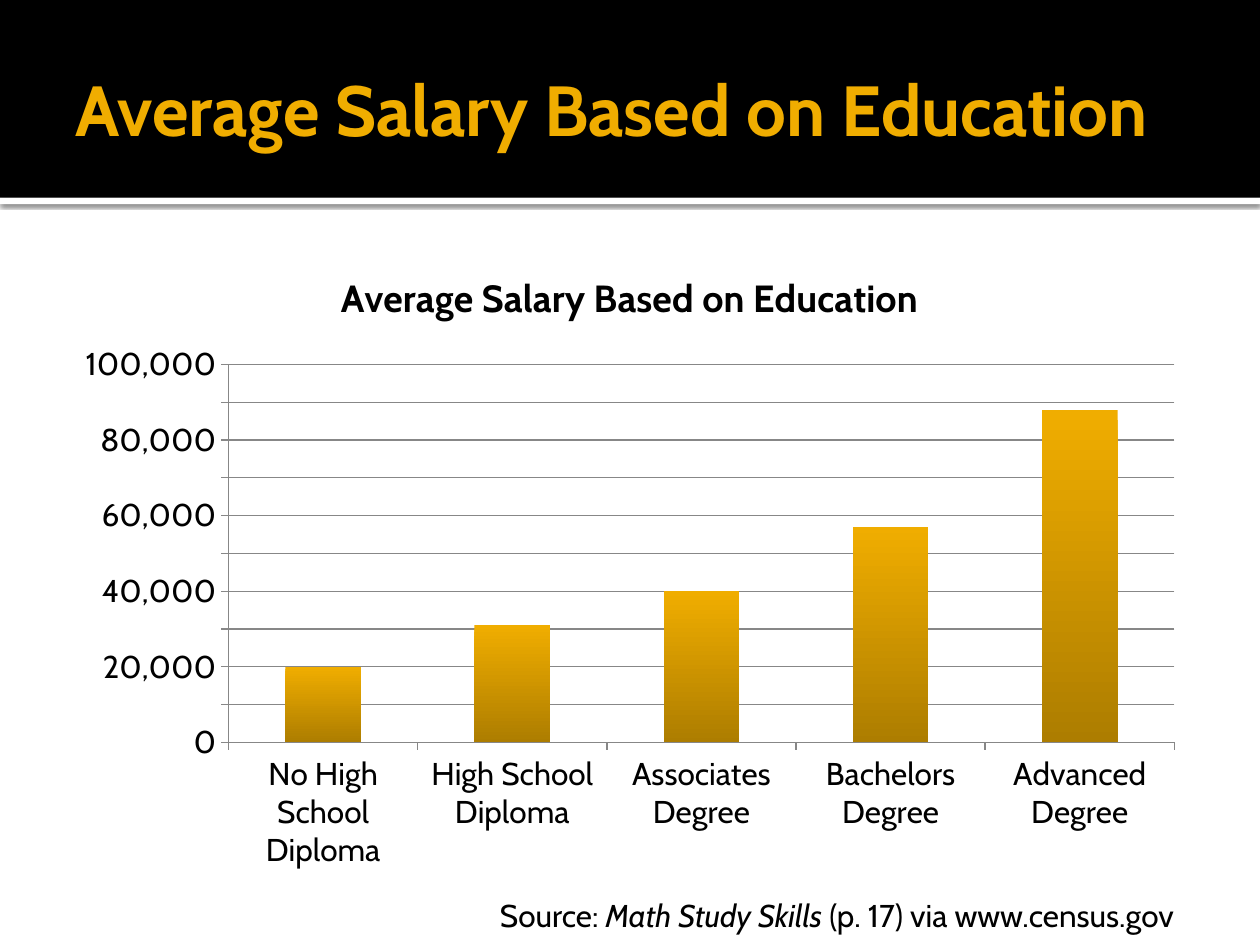
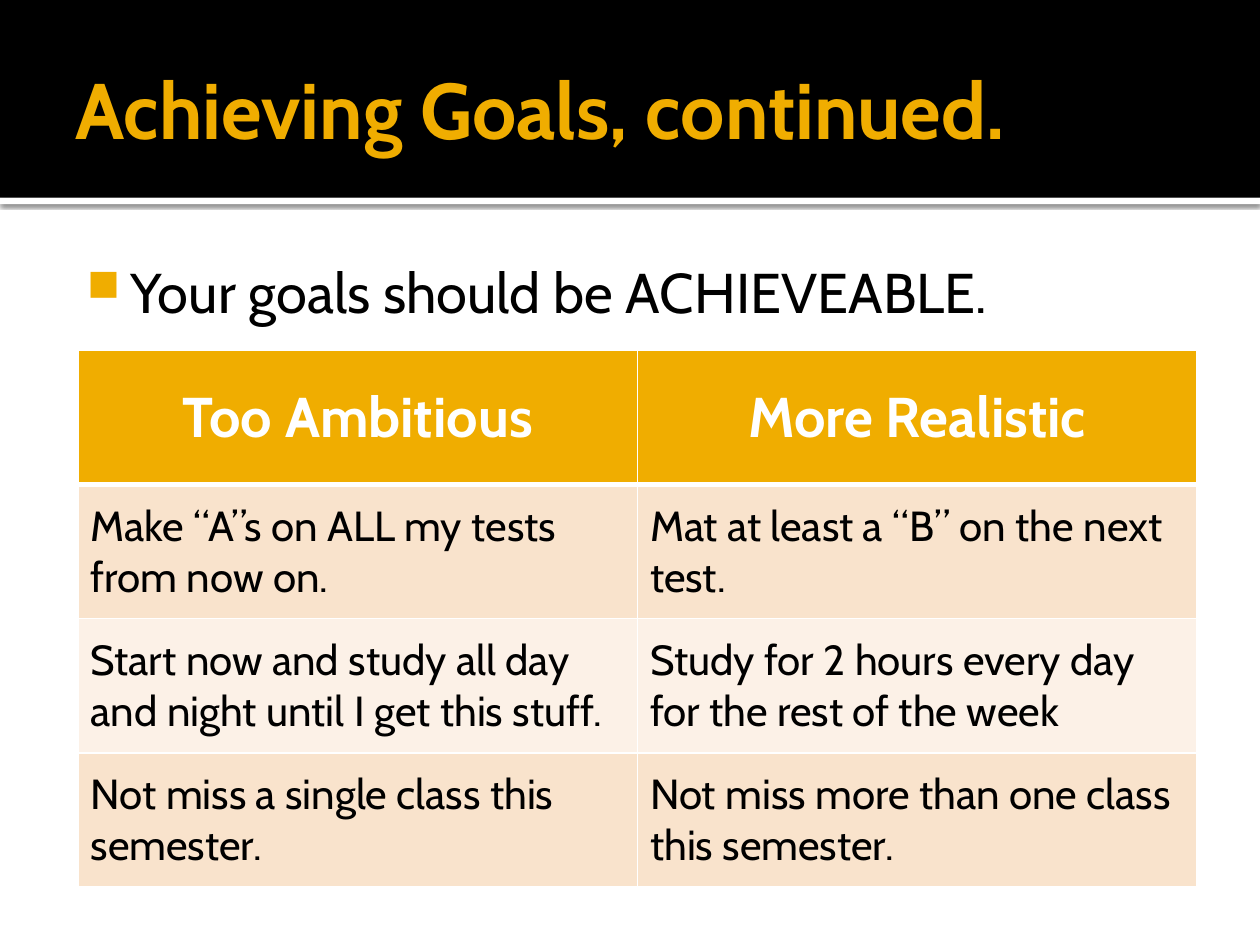
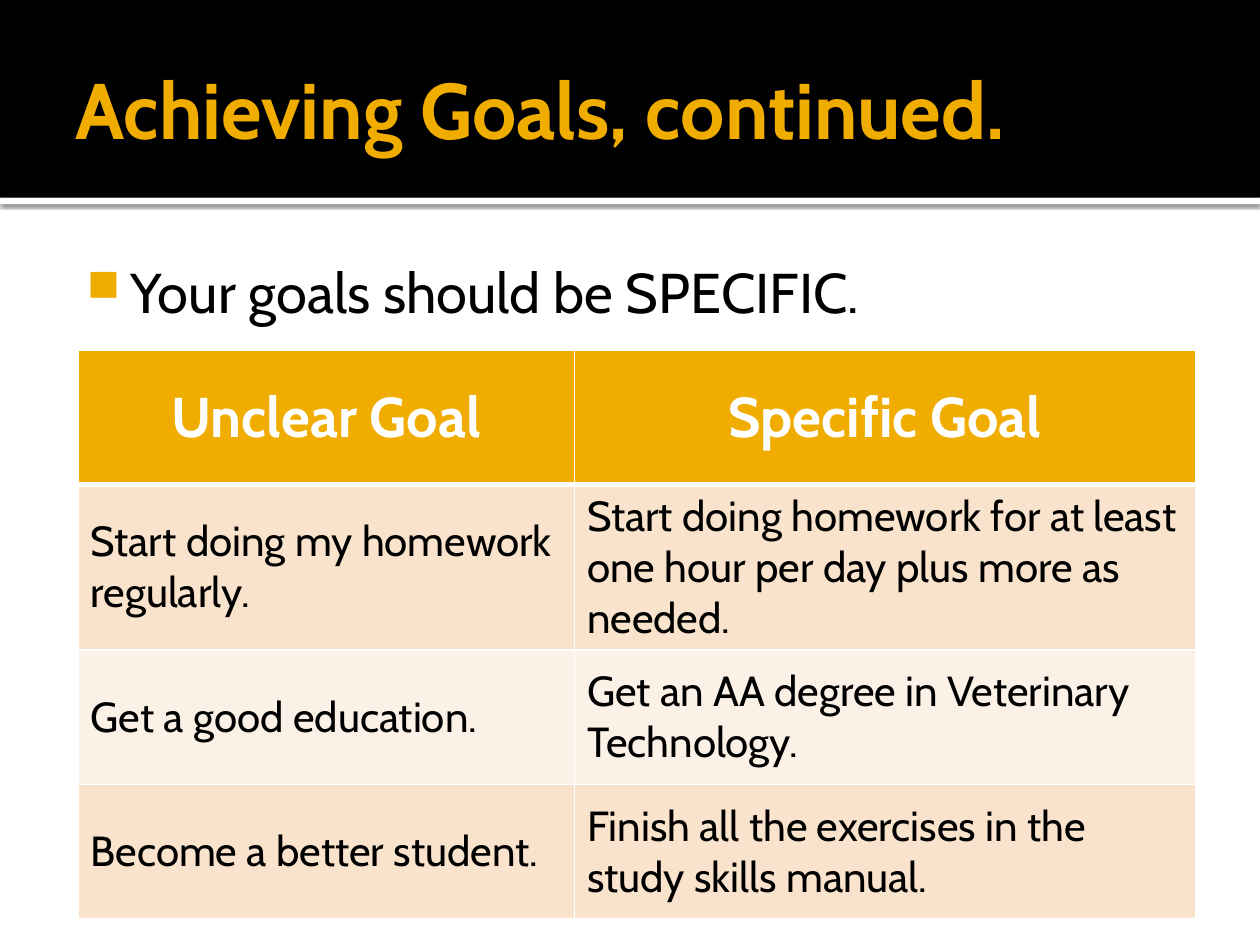
import pptx
import pptx.util
import pptx.chart.data
import pptx.dml.color
import pptx.enum.chart
import pptx.enum.shapes
import pptx.enum.text
import pptx.oxml
import pptx.oxml.ns

FONT = "Cabin"
GOLD, DARK_GOLD = "F0AD00", "AD7D00"
BLACK, WHITE, GRAY = "000000", "FFFFFF", "878787"
PEACH, CREAM = "F9E3CC", "FCF1E7"
COLS, ROWS = 100, 75  # grid cells across and down the slide
LEFT, WIDTH = 5, 90   # content column
BAND = 15.7           # height of the title band
NS = pptx.oxml.ns.nsdecls("a")


def color(hex_code):
    return pptx.dml.color.RGBColor.from_string(hex_code)


def style(font, size, hex_code=BLACK, bold=False, italic=False):
    font.name, font.size = FONT, pptx.util.Pt(size)
    font.bold, font.italic = bold, italic
    font.color.rgb = color(hex_code)


def add_run(p, text, size, hex_code=BLACK, bold=False, italic=False):
    r = p.add_run()
    r.text = text
    style(r.font, size, hex_code, bold, italic)


class Deck:
    def __init__(self):
        self.prs = pptx.Presentation()
        self.prs.slide_width = pptx.util.Inches(10)
        self.prs.slide_height = pptx.util.Inches(7.5)
        self.layout = self.prs.slide_layouts[5]
        self.s = None

    def x(self, cols):
        return round(self.prs.slide_width * cols / COLS)

    def y(self, rows):
        return round(self.prs.slide_height * rows / ROWS)

    def box(self, left, top, width, height):
        return self.x(left), self.y(top), self.x(width), self.y(height)

    def frame(self, tf, insets):
        tf.word_wrap = True
        tf.auto_size = pptx.enum.text.MSO_AUTO_SIZE.NONE
        tf.margin_left, tf.margin_top, tf.margin_right, tf.margin_bottom = (
            pptx.util.Inches(inset) for inset in insets)

    # Shared bands, kept on the layout
    def band(self, top, height, hex_code, shadow=False):
        sp = self.s.shapes.add_shape(pptx.enum.shapes.MSO_SHAPE.RECTANGLE,
                                     *self.box(0, top, COLS, height))
        sp.shadow.inherit = False
        sp.fill.solid()
        sp.fill.fore_color.rgb = color(hex_code)
        sp.line.fill.background()
        if shadow:
            effects = sp.element.spPr.find(pptx.oxml.ns.qn("a:effectLst"))
            effects.append(pptx.oxml.parse_xml(
                f'<a:outerShdw {NS} blurRad="31750" dist="10160" dir="5400000">'
                f'<a:srgbClr val="{BLACK}"><a:alpha val="60000"/></a:srgbClr>'
                '</a:outerShdw>'))
        self.layout.shapes.element.insert(2, sp.element)

    def slide(self, title, size=45):
        first = self.s is None
        self.s = self.prs.slides.add_slide(self.layout)
        if first:
            self.band(0, BAND, BLACK)
            self.band(BAND, 0.5, WHITE, shadow=True)
        sp = self.s.shapes.title
        sp.left, sp.top, sp.width, sp.height = self.box(LEFT, 1.7, WIDTH, 13.7)
        tf = sp.text_frame
        self.frame(tf, (0.1, 0.05, 0.05, 0.05))
        tf.vertical_anchor = pptx.enum.text.MSO_ANCHOR.MIDDLE
        p = tf.paragraphs[0]
        p.alignment = pptx.enum.text.PP_ALIGN.LEFT
        add_run(p, title, size, GOLD, bold=True)

    def text(self, box, insets=(0.1, 0.05, 0.1, 0.05)):
        tf = self.s.shapes.add_textbox(*self.box(*box)).text_frame
        self.frame(tf, insets)
        return tf.paragraphs[0]

    def bullet(self, text):
        p = self.text((LEFT, 19.4, WIDTH, 6.9), (0.06, 0.1, 0.1, 0.05))
        pPr = p._p.get_or_add_pPr()
        pPr.set("marL", str(pptx.util.Inches(0.48)))
        pPr.set("indent", str(pptx.util.Inches(-0.35)))
        for xml in (f'<a:buClr {NS}><a:srgbClr val="{GOLD}"/></a:buClr>',
                    f'<a:buSzPct {NS} val="80000"/>',
                    f'<a:buChar {NS} char="■"/>'):
            pPr.append(pptx.oxml.parse_xml(xml))
        add_run(p, text, 32)

    def chart(self, box, title, data):
        cd = pptx.chart.data.CategoryChartData()
        cd.categories = list(data)
        cd.add_series("Series 1", list(data.values()))
        chart = self.s.shapes.add_chart(
            pptx.enum.chart.XL_CHART_TYPE.COLUMN_CLUSTERED,
            *self.box(*box), cd).chart
        style(chart.font, 18)
        chart.has_legend = False
        add_run(chart.chart_title.text_frame.paragraphs[0], title, 21.6, bold=True)
        chart.chart_title.include_in_layout = False
        # Axes
        value_axis = chart.value_axis
        value_axis.minimum_scale, value_axis.maximum_scale = 0, 100000
        value_axis.major_unit = 10000
        value_axis.tick_labels.number_format = "#,##0"
        value_axis.tick_labels.number_format_is_linked = False
        value_axis.has_major_gridlines = True
        for axis in (chart.category_axis, value_axis):
            axis.major_tick_mark = pptx.enum.chart.XL_TICK_MARK.OUTSIDE
        for part in (chart.category_axis, value_axis, value_axis.major_gridlines):
            part.format.line.color.rgb = color(GRAY)
            part.format.line.width = pptx.util.Pt(0.75)
        # Columns
        plot = chart.plots[0]
        plot.gap_width = 150
        plot.vary_by_categories = False
        fill = plot.series[0].format.fill
        fill.gradient()
        fill.gradient_angle = 270
        for stop, hex_code in zip(fill.gradient_stops, (GOLD, DARK_GOLD)):
            stop.color.rgb = color(hex_code)

    def borders(self, cell, top, bottom):
        tcPr = cell._tc.get_or_add_tcPr()
        for i, (side, points) in enumerate(
                (("L", 1), ("R", 1), ("T", top), ("B", bottom))):
            tcPr.insert(i, pptx.oxml.parse_xml(
                f'<a:ln{side} {NS} w="{pptx.util.Pt(points)}"><a:solidFill>'
                f'<a:srgbClr val="{WHITE}"/></a:solidFill></a:ln{side}>'))

    def table(self, widths, rows, row_height=10.65):
        table = self.s.shapes.add_table(
            len(rows), len(widths),
            *self.box(6.2, 27.8, sum(widths), row_height * len(rows))).table
        table.horz_banding = False
        for column, width in zip(table.columns, widths):
            column.width = self.x(width)
        for i, row in enumerate(rows):
            header = i == 0
            fill = GOLD if header else PEACH if i % 2 else CREAM
            for j, text in enumerate(row):
                cell = table.cell(i, j)
                cell.fill.solid()
                cell.fill.fore_color.rgb = color(fill)
                cell.vertical_anchor = pptx.enum.text.MSO_ANCHOR.MIDDLE
                self.borders(cell, 3 if i == 1 else 1, 3 if header else 1)
                p = cell.text_frame.paragraphs[0]
                if header:
                    p.alignment = pptx.enum.text.PP_ALIGN.CENTER
                    add_run(p, text, 32, WHITE, bold=True)
                else:
                    add_run(p, text, 24)


def main():
    deck = Deck()

    # Salary chart
    title = "Average Salary Based on Education"
    deck.slide(title, 40.5)
    deck.chart((LEFT, 19.4, WIDTH, 50.6), title, {
        "No High School Diploma": 20000,
        "High School Diploma": 31000,
        "Associates Degree": 40000,
        "Bachelors Degree": 57000,
        "Advanced Degree": 88000,
    })
    p = deck.text((38.7, 70.6, 56.3, 4))
    add_run(p, "Source: ", 18)
    add_run(p, "Math Study Skills", 18, italic=True)
    add_run(p, " (p. 17) via www.census.gov", 18)

    # Goal tables
    goals = (
        ("Your goals should be ACHIEVEABLE.", (44.4, 44.4), (
            ("Too Ambitious", "More Realistic"),
            ("Make “A”s on ALL my tests from now on.",
             "Mat at least a “B” on the next test."),
            ("Start now and study all day and night until I get this stuff.",
             "Study for 2 hours every day for the rest of the week"),
            ("Not miss a single class this semester.",
             "Not miss more than one class this semester."))),
        ("Your goals should be SPECIFIC.", (39.4, 49.3), (
            ("Unclear Goal", "Specific Goal"),
            ("Start doing my homework regularly.",
             "Start doing homework for at least one hour per day plus more as needed."),
            ("Get a good education.",
             "Get an AA degree in Veterinary Technology."),
            ("Become a better student.",
             "Finish all the exercises in the study skills manual."))),
    )
    for statement, widths, rows in goals:
        deck.slide("Achieving Goals, continued.")
        deck.bullet(statement)
        deck.table(widths, rows)

    deck.prs.save("out.pptx")


if __name__ == "__main__":
    main()
